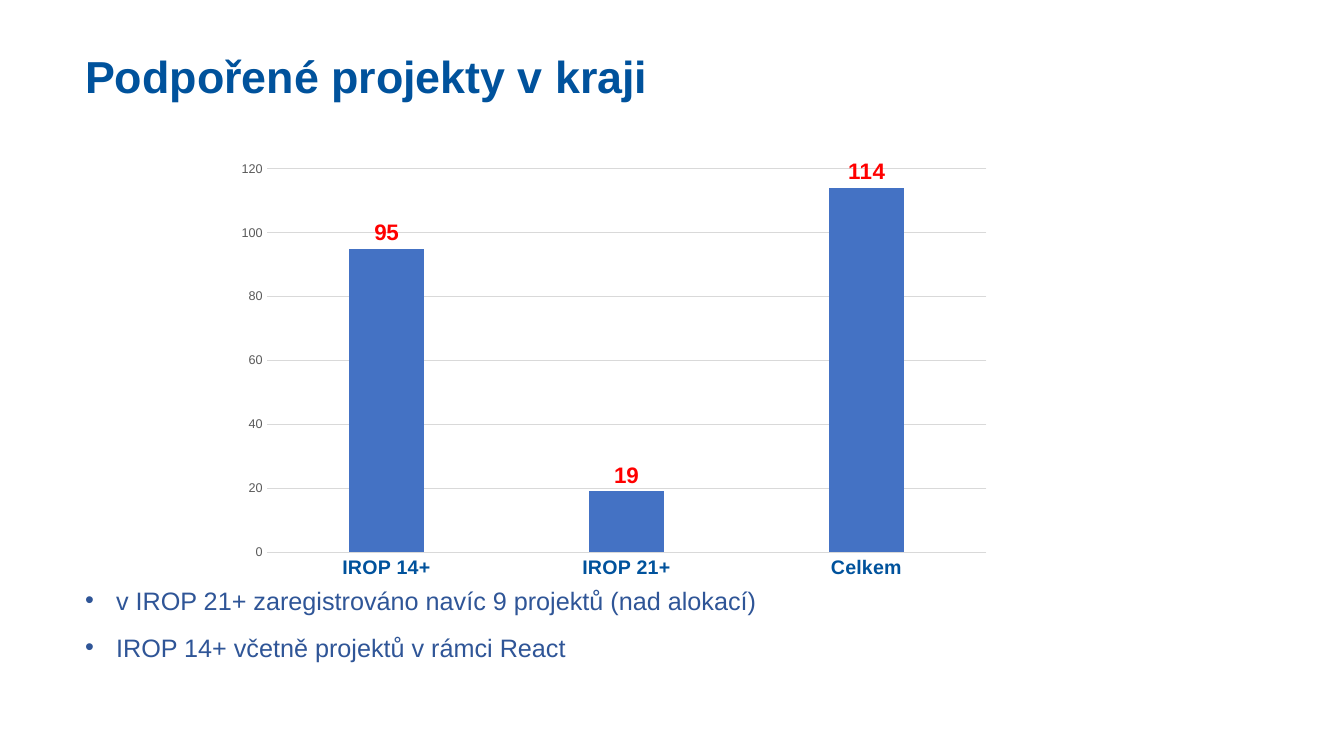
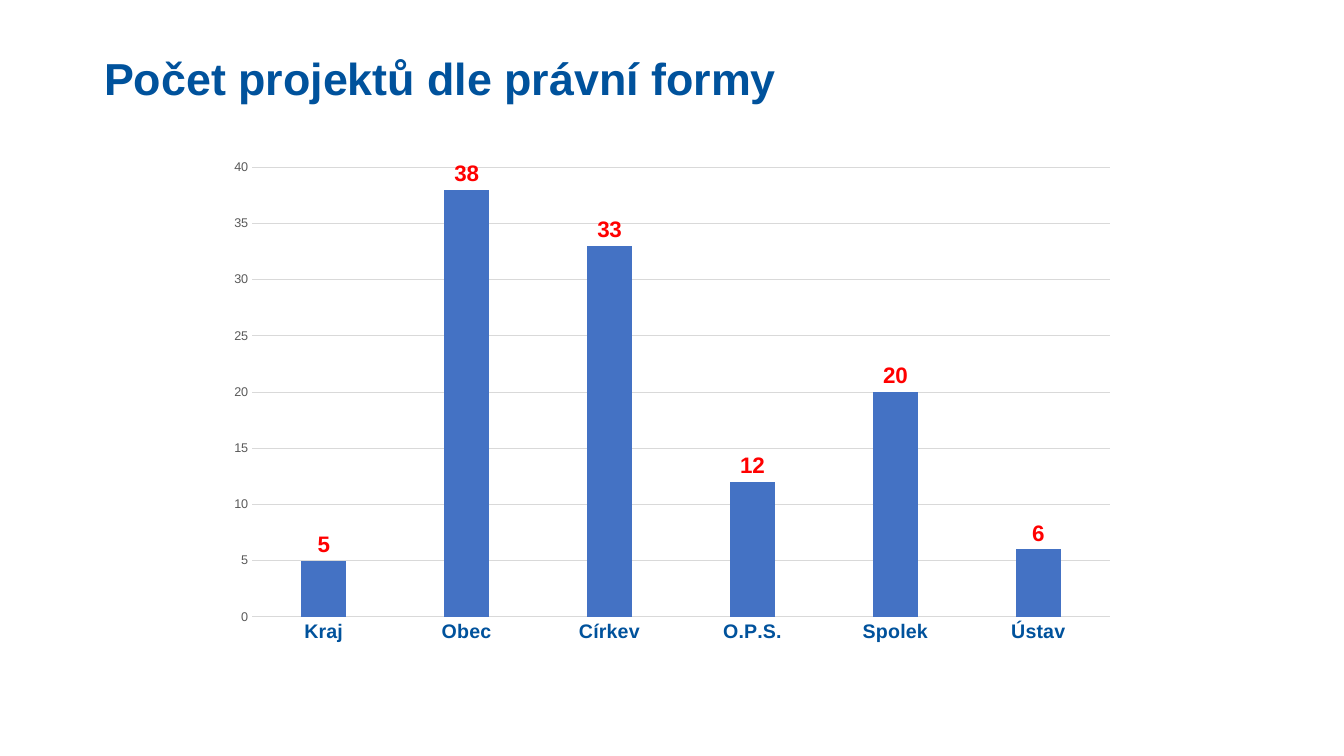
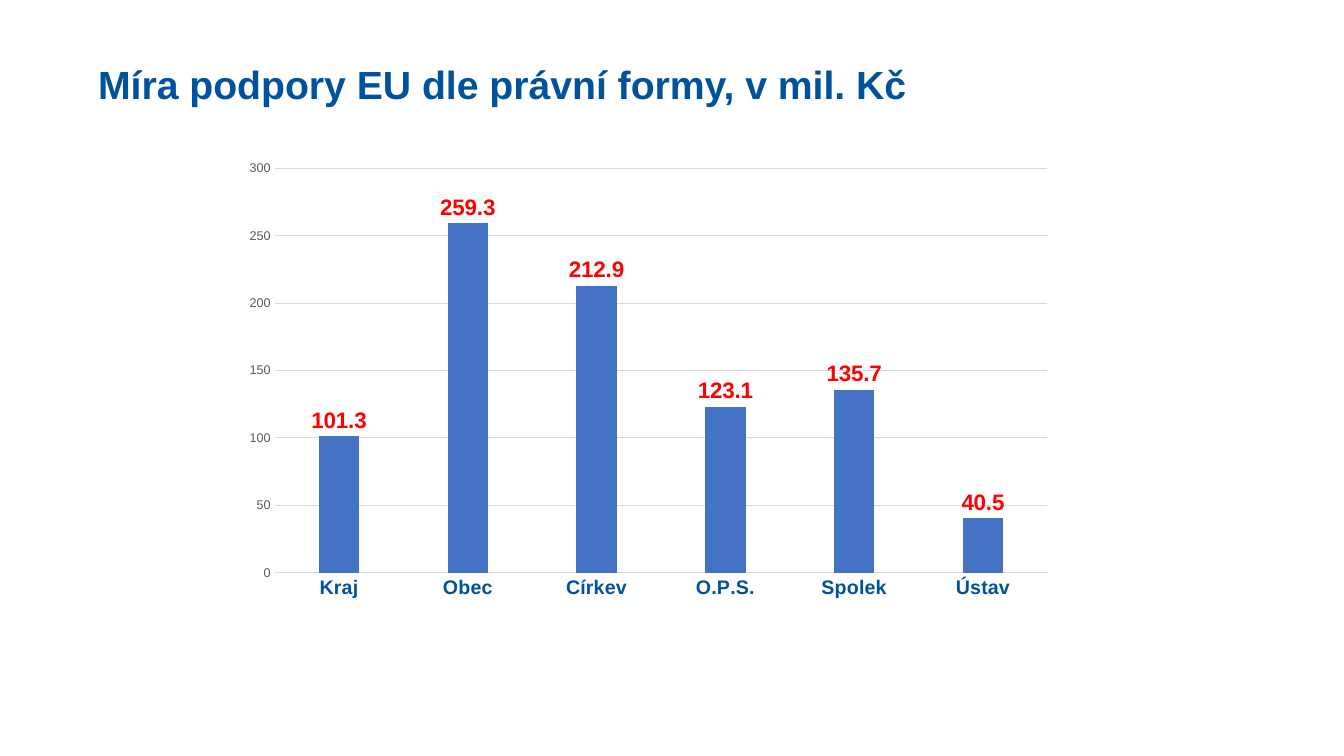
from dataclasses import dataclass

from pptx import Presentation
from pptx.chart.data import CategoryChartData as Data
from pptx.dml.color import RGBColor as RGB
from pptx.enum.chart import XL_CHART_TYPE as Kind
from pptx.enum.chart import XL_LABEL_POSITION as Spot
from pptx.enum.chart import XL_TICK_MARK as Tick
from pptx.enum.text import MSO_ANCHOR as Anchor
from pptx.enum.text import MSO_AUTO_SIZE as Fit
from pptx.enum.text import PP_ALIGN as Align
from pptx.util import Pt

PX = 12192000 / 1344


@dataclass(frozen=True)
class Theme:
    face: str = "Arial"
    head: str = "00529C"
    body: str = "2F5597"
    bar: str = "4472C4"
    value: str = "FF0000"
    scale: str = "595959"
    rule: str = "D9D9D9"
    text: str = "000000"
    body_pt: int = 18
    value_pt: int = 16
    name_pt: int = 14
    chart_pt: int = 10
    scale_pt: int = 9
    rule_pt: float = 0.75


T = Theme()


def px(*nums):
    return [round(n * PX) for n in nums]


def style(font, size, color, bold=False):
    form = {"name": T.face, "size": Pt(size), "bold": bold}
    for key, val in form.items():
        setattr(font, key, val)
    font.color.rgb = RGB.from_string(color)


forms = ["Kraj", "Obec", "Církev", "O.P.S.", "Spolek", "Ústav"]
pages = [
    {
        "title": "Podpořené projekty v kraji",
        "size": 32, "wrap": True, "box": (75, 40, 1194, 77),
        "plot": (226, 153, 776, 434), "top": 120, "step": 20,
        "names": ["IROP 14+", "IROP 21+", "Celkem"],
        "vals": [95, 19, 114],
        "list": [
            "v IROP 21+ zaregistrováno navíc 9 projektů (nad alokací)",
            "IROP 14+ včetně projektů v rámci React",
        ],
        "area": (75, 580, 776, 89),
    },
    {
        "title": "Počet projektů dle právní formy",
        "size": 32, "wrap": True, "box": (94, 51, 1176, 59),
        "plot": (216, 150, 912, 503), "top": 40, "step": 5,
        "names": forms,
        "vals": [5, 38, 33, 12, 20, 6],
    },
    {
        "title": "Míra podpory EU dle právní formy, v mil. Kč",
        "size": 28, "wrap": False, "box": (88, 60, 849, 53),
        "plot": (233, 152, 831, 456), "top": 300, "step": 50,
        "names": forms,
        "vals": [101.3, 259.3, 212.9, 123.1, 135.7, 40.5],
    },
]

deck = Presentation()
deck.slide_width, deck.slide_height = px(1344, 756)
sides = ("left", "top", "width", "height")

for page in pages:
    items = page.get("list", [])
    slide = deck.slides.add_slide(deck.slide_layouts[1 if items else 5])

    # Title
    title = slide.shapes.title
    for side, val in zip(sides, px(*page["box"])):
        setattr(title, side, val)
    frame = title.text_frame
    frame.text = page["title"]
    frame.auto_size = Fit.NONE
    frame.word_wrap = page["wrap"]
    frame.vertical_anchor = Anchor.MIDDLE
    para = frame.paragraphs[0]
    para.alignment = Align.LEFT
    para.line_spacing = 0.9
    style(para.runs[0].font, page["size"], T.head, True)

    # Column chart
    data = Data()
    data.categories = page["names"]
    data.add_series("Series 1", page["vals"])
    chart = slide.shapes.add_chart(
        Kind.COLUMN_CLUSTERED, *px(*page["plot"]), data).chart
    chart.has_title = chart.has_legend = False
    style(chart.font, T.chart_pt, T.text)

    names, scale = chart.category_axis, chart.value_axis
    for axis in (names, scale):
        axis.major_tick_mark = axis.minor_tick_mark = Tick.NONE
    style(names.tick_labels.font, T.name_pt, T.head, True)
    style(scale.tick_labels.font, T.scale_pt, T.scale)
    limits = {"minimum_scale": 0, "maximum_scale": page["top"],
              "major_unit": page["step"], "has_major_gridlines": True}
    for key, val in limits.items():
        setattr(scale, key, val)
    scale.format.line.fill.background()
    for line in (names.format.line, scale.major_gridlines.format.line):
        line.color.rgb = RGB.from_string(T.rule)
        line.width = Pt(T.rule_pt)

    plot = chart.plots[0]
    plot.gap_width, plot.overlap = 219, -27
    plot.vary_by_categories = False
    row = plot.series[0]
    row.format.fill.solid()
    row.format.fill.fore_color.rgb = RGB.from_string(T.bar)
    tags = row.data_labels
    tags.show_value = True
    tags.position = Spot.OUTSIDE_END
    style(tags.font, T.value_pt, T.value, True)

    # Bullet list
    if items:
        body = slide.placeholders[1]
        for side, val in zip(sides, px(*page["area"])):
            setattr(body, side, val)
        frame = body.text_frame
        frame.text = "\n".join(items)
        frame.word_wrap = True
        frame.auto_size = Fit.NONE
        hang, = px(31)
        for i, para in enumerate(frame.paragraphs):
            para.alignment = Align.JUSTIFY
            para.space_before = Pt(12 if i else 0)
            props = para._p.get_or_add_pPr()
            props.set("marL", str(hang))
            props.set("indent", str(-hang))
            style(para.font, T.body_pt, T.body)

deck.save("out.pptx")
